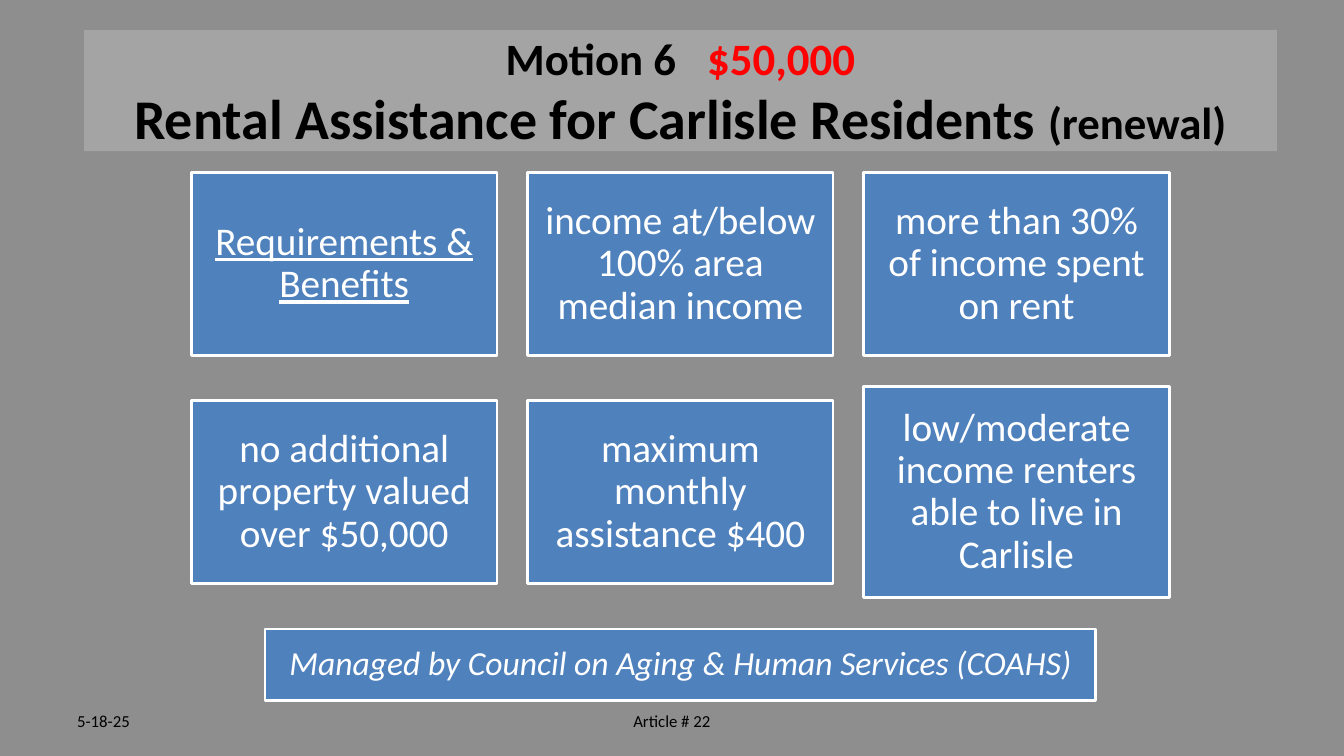
from lxml.etree import SubElement
from pptx import Presentation
from pptx.dml.color import RGBColor
from pptx.enum.shapes import MSO_SHAPE
from pptx.enum.text import MSO_ANCHOR, PP_ALIGN
from pptx.oxml.ns import qn
from pptx.util import Pt

# Content: each line of text is a list of (text, style) runs
TITLE = [
    [("Motion 6 \t", {"size": 32}), ("$50,000", {"size": 32, "color": "red"})],
    [("Rental Assistance for Carlisle Residents ", {"size": 40}),
     ("(renewal)", {"size": 32})],
]
CARDS = [
    ("Requirements & Benefits", {"underline": True}),
    ("income at/below 100% area median income", {}),
    ("more than 30% of income spent on rent", {}),
    ("no additional property valued over $50,000", {}),
    ("maximum monthly assistance $400", {}),
    ("low/moderate income renters able to live in Carlisle", {}),
]
MANAGER = "Managed by Council on Aging & Human Services (COAHS)"
DATE, ARTICLE = "5-18-25", "Article # 22"

COLORS = {"background": "8E8E8E", "banner": "BABABA", "card": "4F81BD",
          "white": "FFFFFF", "black": "000000", "red": "FF0000"}
FONT = "Calibri"

# Layout in points
CENTER_X = 486
COLUMNS = 3
CARD_WIDTH, CARD_HEIGHT, TALL_HEIGHT = 218.2, 131, 151.2
COLUMN_PITCH = 240.1
ROW_CENTERS = (188.6, 351.4)


def color(name):
    return RGBColor.from_string(COLORS[name])


def write_lines(shape, lines, inset=None, align=PP_ALIGN.CENTER, spacing=1.0):
    frame = shape.text_frame
    frame.word_wrap = True
    frame.vertical_anchor = MSO_ANCHOR.MIDDLE
    if inset is not None:
        frame.margin_left = frame.margin_right = Pt(inset)
        frame.margin_top = frame.margin_bottom = Pt(inset)
    for index, line in enumerate(lines):
        paragraph = frame.add_paragraph() if index else frame.paragraphs[0]
        paragraph.alignment = align
        paragraph.line_spacing = spacing
        for text, style in line:
            run = paragraph.add_run()
            run.text = text
            font = run.font
            font.name = FONT
            font.size = Pt(style["size"])
            font.bold = style.get("bold", False)
            font.italic = style.get("italic", False)
            font.underline = style.get("underline", False)
            font.color.rgb = color(style.get("color", "black"))


def add_box(slide, center_x, center_y, width, height, fill):
    shape = slide.shapes.add_shape(
        MSO_SHAPE.RECTANGLE, Pt(center_x - width / 2), Pt(center_y - height / 2),
        Pt(width), Pt(height))
    shape.shadow.inherit = False
    shape.fill.solid()
    shape.fill.fore_color.rgb = color(fill)
    shape.line.fill.background()
    return shape


def add_card(slide, center_x, center_y, width, height, text, style, inset):
    shape = add_box(slide, center_x, center_y, width, height, "card")
    shape.line.color.rgb = color("white")
    shape.line.width = Pt(2)
    write_lines(shape, [[(text, {"color": "white", **style})]], inset, spacing=0.9)


def add_footer(slide, left, width, text, align):
    box = slide.shapes.add_textbox(Pt(left), Pt(500.4), Pt(width), Pt(28.8))
    write_lines(box, [[(text, {"size": 12})]], align=align)


def main():
    presentation = Presentation()
    presentation.slide_width, presentation.slide_height = Pt(960), Pt(540)
    slide = presentation.slides.add_slide(presentation.slide_layouts[6])
    slide.background.fill.solid()
    slide.background.fill.fore_color.rgb = color("background")

    # Half-transparent title banner
    banner = add_box(slide, CENTER_X, 64.8, 852, 86.4, "banner")
    fill_color = banner.fill._xPr.find(qn("a:solidFill"))[0]
    SubElement(fill_color, qn("a:alpha")).set("val", "50000")
    write_lines(banner, [[(text, {"bold": True, **style}) for text, style in line]
                         for line in TITLE])

    # Grid of requirement cards; the last one is taller
    for index, (text, style) in enumerate(CARDS):
        row, column = divmod(index, COLUMNS)
        center_x = CENTER_X + (column - 1) * COLUMN_PITCH
        height = TALL_HEIGHT if index == len(CARDS) - 1 else CARD_HEIGHT
        add_card(slide, center_x, ROW_CENTERS[row], CARD_WIDTH, height,
                 text, {"size": 28, **style}, 8.4)

    # Managing body
    add_card(slide, CENTER_X, 474.8, 593.3, 51.1,
             MANAGER, {"size": 24, "italic": True}, 7.2)

    # Footer
    add_footer(slide, 48, 224, DATE, PP_ALIGN.LEFT)
    add_footer(slide, 328, 304, ARTICLE, PP_ALIGN.CENTER)

    presentation.save("out.pptx")


if __name__ == "__main__":
    main()
